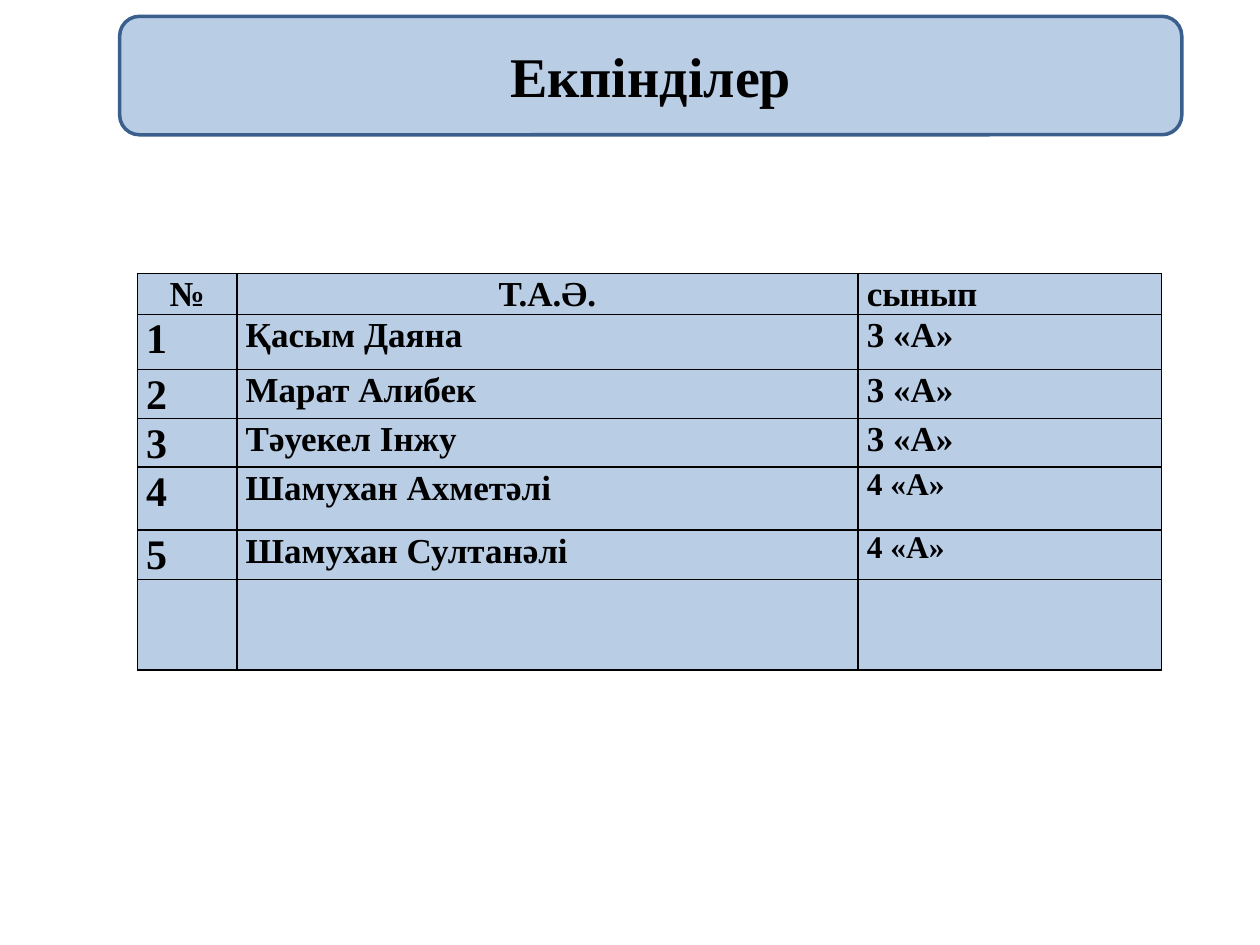
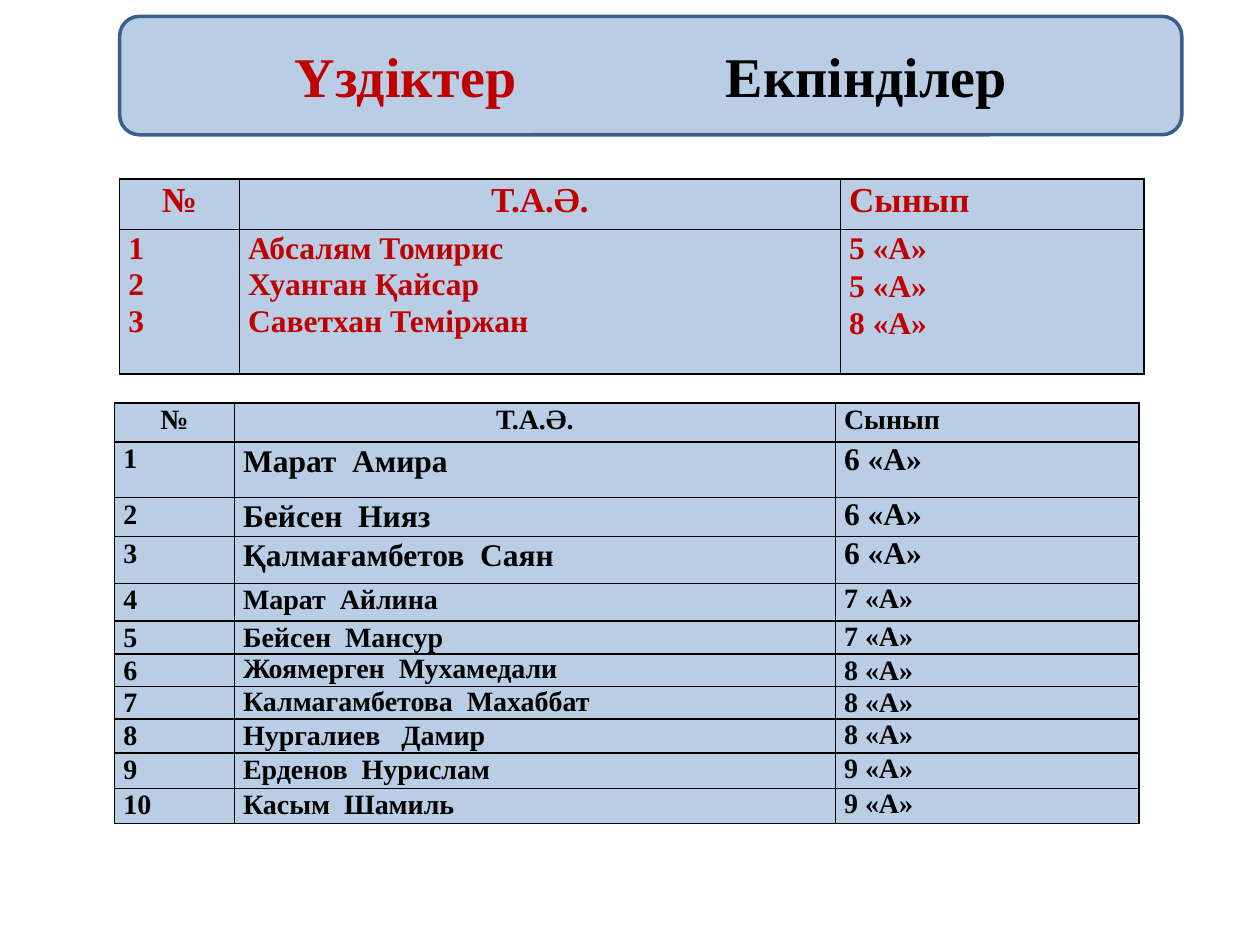
from lxml.etree import SubElement as Sub
from pptx import Presentation as Deck
from pptx.dml.color import RGBColor as Rgb
from pptx.enum.shapes import MSO_SHAPE as Kind
from pptx.enum.text import MSO_ANCHOR as Anchor, MSO_AUTO_SIZE as Fit, PP_ALIGN as Align
from pptx.oxml.ns import qn
from pptx.util import Emu, Pt

PX = 9144
FONT = "Times New Roman"
FILL, EDGE, BLACK, RED = "B9CDE5", "3A5F8C", "000000", "C00000"
BAND = (95, 13, 843, 94)
EVEN = (1.05, 1.05, 1.05)
NAME = (1.05, 1, 1.05)
LAST = (1.05, 1.05, 1)
WIDE = (1.05, 1.05, 1.07)


def px(num):
    """Turn px into EMU."""
    return Emu(num * PX)


def rgb(code):
    """Turn a hex string into a colour."""
    return Rgb.from_string(code)


def paint(shape, code):
    """Fill a shape or a cell with one colour."""
    shape.fill.solid()
    shape.fill.fore_color.rgb = rgb(code)


def style(run, size, code):
    """Give a run the bold deck font."""
    font = run.font
    font.name, font.size, font.bold = FONT, Pt(size), True
    font.color.rgb = rgb(code)


def band(slide):
    """Draw the rounded band behind the title."""
    box = slide.shapes.add_shape(Kind.ROUNDED_RECTANGLE, *map(px, BAND))
    box.shadow.inherit = False
    paint(box, FILL)
    box.line.color.rgb = rgb(EDGE)
    box.line.width = Pt(2)
    slide.shapes._spTree.insert(2, box._element)


def title(slide, parts, inset=10, stop=None):
    """Write the title in coloured parts, with a tab stop between them."""
    band(slide)
    head = slide.shapes.title
    head.left, head.top, head.width, head.height = map(px, BAND)
    frame = head.text_frame
    frame.auto_size, frame.vertical_anchor = Fit.NONE, Anchor.MIDDLE
    frame.margin_left = px(inset)
    para = frame.paragraphs[0]
    para.alignment = Align.LEFT if stop else Align.CENTER
    for text, code in parts:
        run = para.add_run()
        run.text = text
        style(run, 32, code)
    if stop:
        tabs = Sub(para._p.get_or_add_pPr(), qn("a:tabLst"))
        Sub(tabs, qn("a:tab"), pos=str(px(stop)), algn="l")


def frame_cell(cell):
    """Put a thin black border on the four sides of a cell."""
    props = cell._tc.get_or_add_tcPr()
    for spot, side in enumerate(("lnL", "lnR", "lnT", "lnB")):
        line = Sub(props, qn("a:" + side), w=str(Pt(1)))
        fill = Sub(line, qn("a:solidFill"))
        Sub(fill, qn("a:srgbClr"), val=BLACK)
        props.insert(spot, line)


def fill_cell(cell, text, size, lead, code, align):
    """Write and format one cell."""
    cell.margin_left = cell.margin_right = px(7)
    cell.margin_top = cell.margin_bottom = 0
    paint(cell, FILL)
    frame_cell(cell)
    cell.text_frame.text = text
    for para in cell.text_frame.paragraphs:
        para.alignment, para.line_spacing = align, lead
        for run in para.runs:
            style(run, size, code)


def grid(slide, left, top, cols, rows, code=BLACK):
    """Add a list of pupils; a row is height, texts, sizes and leading."""
    high = sum(row[0] for row in rows)
    place = map(px, (left, top, sum(cols), high))
    table = slide.shapes.add_table(len(rows), len(cols), *place).table
    table.first_row = table.horz_banding = False
    for col, wide in zip(table.columns, cols):
        col.width = px(wide)
    for r, (tall, texts, sizes, leads) in enumerate(rows):
        table.rows[r].height = px(tall)
        for c, (text, size, lead) in enumerate(zip(texts, sizes, leads)):
            align = Align.CENTER if r == 0 and c < 2 else Align.LEFT
            fill_cell(table.cell(r, c), text, size, lead, code, align)


def main():
    """Build both slides and save the deck."""
    deck = Deck()
    deck.slide_width, deck.slide_height = px(1000), px(750)
    plain = deck.slide_layouts[5]

    first = deck.slides.add_slide(plain)
    title(first, [("Екпінділер", BLACK)])
    big, mix = (24, 20, 20), (24, 20, 18)
    grid(first, 109, 217, (79, 493, 241), [
        (31, ("№", "Т.А.Ә.", "сынып"), (20, 20, 20), EVEN),
        (44, ("1", "Қасым Даяна", "3 «А»"), big, EVEN),
        (31, ("2", "Марат Алибек", "3 «А»"), big, EVEN),
        (37, ("3", "Тәуекел Інжу", "3 «А»"), big, EVEN),
        (50, ("4", "Шамухан Ахметәлі", "4 «А»"), mix, LAST),
        (39, ("5", "Шамухан Султанәлі", "4 «А»"), mix, LAST),
        (72, ("", "", ""), mix, EVEN),
    ])

    second = deck.slides.add_slide(plain)
    title(second, [("Үздіктер\t", RED), ("Екпінділер", BLACK)], 139, 342)
    cols = (95, 477, 241)
    names = "Абсалям Томирис\nХуанган Қайсар\nСаветхан Теміржан"
    grid(second, 95, 142, cols, [
        (40, ("№", "Т.А.Ә.", "Сынып"), (20, 20, 20), EVEN),
        (115, ("1\n2\n3", names, "5 «А»\n5 «А»\n8 «А»"), (18, 18, 18), WIDE),
    ], RED)
    low, mid = (16, 16, 16), (16, 18, 18)
    grid(second, 91, 320, cols, [
        (31, ("№", "Т.А.Ә.", "Сынып"), low, EVEN),
        (44, ("1", "Марат  Амира", "6 «А»"), mid, LAST),
        (31, ("2", "Бейсен  Нияз", "6 «А»"), mid, LAST),
        (37, ("3", "Қалмағамбетов  Саян", "6 «А»"), mid, LAST),
        (30, ("4", "Марат  Айлина", "7 «А»"), low, LAST),
        (22, ("5", "Бейсен  Мансур", "7 «А»"), low, LAST),
        (22, ("6", "Жоямерген  Мухамедали", "8 «А»"), low, NAME),
        (15, ("7", "Калмагамбетова  Махаббат", "8 «А»"), low, NAME),
        (27, ("8", "Нургалиев   Дамир", "8 «А»"), low, LAST),
        (28, ("9", "Ерденов  Нурислам", "9 «А»"), low, LAST),
        (28, ("10", "Касым  Шамиль", "9 «А»"), low, LAST),
    ])
    deck.save("out.pptx")


if __name__ == "__main__":
    main()
